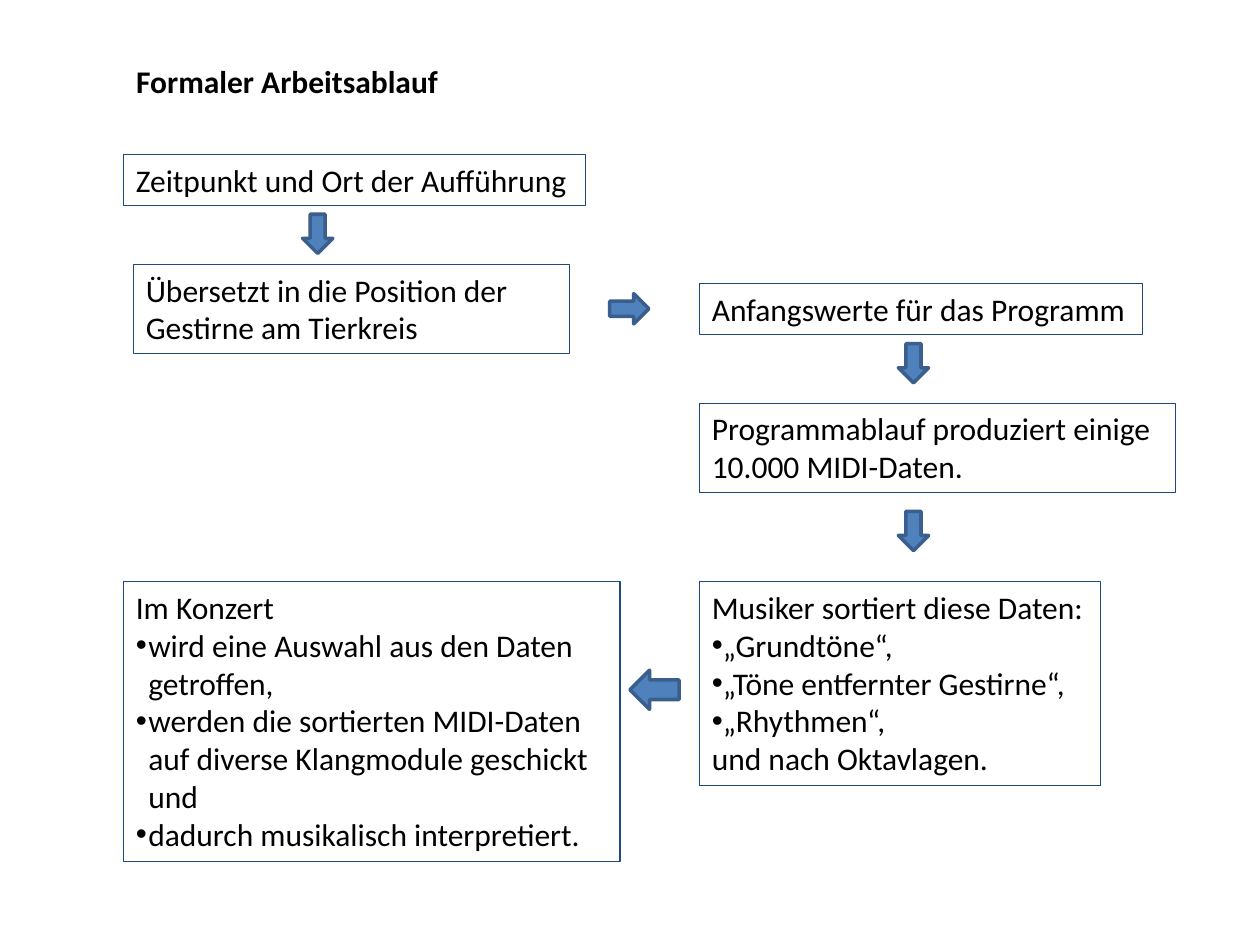
from dataclasses import dataclass

from lxml.etree import SubElement
from pptx import Presentation
from pptx.dml.color import RGBColor
from pptx.enum.shapes import MSO_SHAPE
from pptx.enum.text import MSO_ANCHOR, MSO_AUTO_SIZE, PP_ALIGN
from pptx.oxml.ns import qn
from pptx.util import Cm, Pt

BLACK = RGBColor(0x00, 0x00, 0x00)
BOX_LINE = RGBColor(0x1F, 0x49, 0x7D)
ARROW_FILL = RGBColor(0x4F, 0x81, 0xBD)
ARROW_LINE = RGBColor(0x3A, 0x5F, 0x8C)
FONT = "Calibri"
BULLET = "•"

# Shared positions and sizes in centimetres
LEFT_COLUMN, RIGHT_COLUMN = 2.49, 14.1
BOTTOM_ROW = 11.73
ONE_LINE, TWO_LINES = 1.02, 1.8
RIGHT_ARROWS = 18.11
ARROW_WIDTH, ARROW_LENGTH = 0.61, 0.79


@dataclass
class Step:
    left: float
    top: float
    width: float
    height: float
    lines: list[str]
    wrap: bool = True
    hanging: float = 0


@dataclass
class Arrow:
    kind: MSO_SHAPE
    left: float
    top: float
    width: float = ARROW_WIDTH
    height: float = ARROW_LENGTH


STEPS = [
    Step(LEFT_COLUMN, 3.12, 9.32, ONE_LINE,
         ["Zeitpunkt und Ort der Aufführung"], wrap=False),
    Step(2.69, 5.33, 8.79, TWO_LINES,
         ["Übersetzt in die Position der Gestirne am Tierkreis"]),
    Step(RIGHT_COLUMN, 5.72, 8.94, ONE_LINE,
         ["Anfangswerte für das Programm"], wrap=False),
    Step(RIGHT_COLUMN, 8.13, 9.6, TWO_LINES,
         ["Programmablauf produziert einige 10.000 MIDI-Daten."]),
    Step(RIGHT_COLUMN, BOTTOM_ROW, 8.08, 4.11,
         ["Musiker sortiert diese Daten:",
          "•„Grundtöne“,",
          "•„Töne entfernter Gestirne“,",
          "•„Rhythmen“,",
          "und nach Oktavlagen."], wrap=False),
    Step(LEFT_COLUMN, BOTTOM_ROW, 10.01, 5.64,
         ["Im Konzert",
          "•wird eine Auswahl aus den Daten getroffen,",
          "•werden die sortierten MIDI-Daten auf diverse Klangmodule geschickt und",
          "•dadurch musikalisch interpretiert."], hanging=0.25),
]

ARROWS = [
    Arrow(MSO_SHAPE.DOWN_ARROW, 6.1, 4.32),
    Arrow(MSO_SHAPE.DOWN_ARROW, RIGHT_ARROWS, 6.93),
    Arrow(MSO_SHAPE.DOWN_ARROW, RIGHT_ARROWS, 10.31),
    Arrow(MSO_SHAPE.RIGHT_ARROW, 12.29, 5.92, ARROW_LENGTH, ARROW_WIDTH),
    Arrow(MSO_SHAPE.LEFT_ARROW, 12.7, 13.51, 0.99, 0.79),
]


def add_bullet(paragraph, hanging: float) -> None:
    properties = paragraph._p.get_or_add_pPr()
    properties.set("marL", str(Cm(hanging)))
    properties.set("indent", str(-Cm(hanging)))
    SubElement(properties, qn("a:buFont")).set("typeface", "Arial")
    SubElement(properties, qn("a:buChar")).set("char", BULLET)


def write_text(shape, lines: list[str], *, wrap: bool = True,
               bold: bool = False, hanging: float = 0) -> None:
    """Fill a shape with lines; a leading bullet makes a list item."""
    frame = shape.text_frame
    frame.word_wrap = wrap
    frame.auto_size = MSO_AUTO_SIZE.SHAPE_TO_FIT_TEXT
    frame.vertical_anchor = MSO_ANCHOR.TOP
    for index, line in enumerate(lines):
        paragraph = frame.add_paragraph() if index else frame.paragraphs[0]
        paragraph.alignment = PP_ALIGN.LEFT
        if line.startswith(BULLET):
            add_bullet(paragraph, hanging)
        run = paragraph.add_run()
        run.text = line.removeprefix(BULLET)
        run.font.name = FONT
        run.font.size = Pt(18)
        run.font.bold = bold
        run.font.color.rgb = BLACK


def add_step(slide, step: Step) -> None:
    shape = slide.shapes.add_textbox(
        Cm(step.left), Cm(step.top), Cm(step.width), Cm(step.height))
    shape.line.color.rgb = BOX_LINE
    shape.line.width = Pt(0.75)
    write_text(shape, step.lines, wrap=step.wrap, hanging=step.hanging)


def add_arrow(slide, arrow: Arrow) -> None:
    shape = slide.shapes.add_shape(
        arrow.kind, Cm(arrow.left), Cm(arrow.top), Cm(arrow.width), Cm(arrow.height))
    shape.shadow.inherit = False
    shape.fill.solid()
    shape.fill.fore_color.rgb = ARROW_FILL
    shape.line.color.rgb = ARROW_LINE
    shape.line.width = Pt(2)


def main() -> None:
    presentation = Presentation()
    presentation.slide_width, presentation.slide_height = Cm(25.4), Cm(19.05)
    slide = presentation.slides.add_slide(presentation.slide_layouts[5])

    # Title
    title = slide.shapes.title
    title.left, title.top = Cm(LEFT_COLUMN), Cm(1.12)
    title.width, title.height = Cm(6.65), Cm(ONE_LINE)
    write_text(title, ["Formaler Arbeitsablauf"], wrap=False, bold=True)

    # Workflow boxes and the arrows between them
    for step in STEPS:
        add_step(slide, step)
    for arrow in ARROWS:
        add_arrow(slide, arrow)

    presentation.save("out.pptx")


if __name__ == "__main__":
    main()
